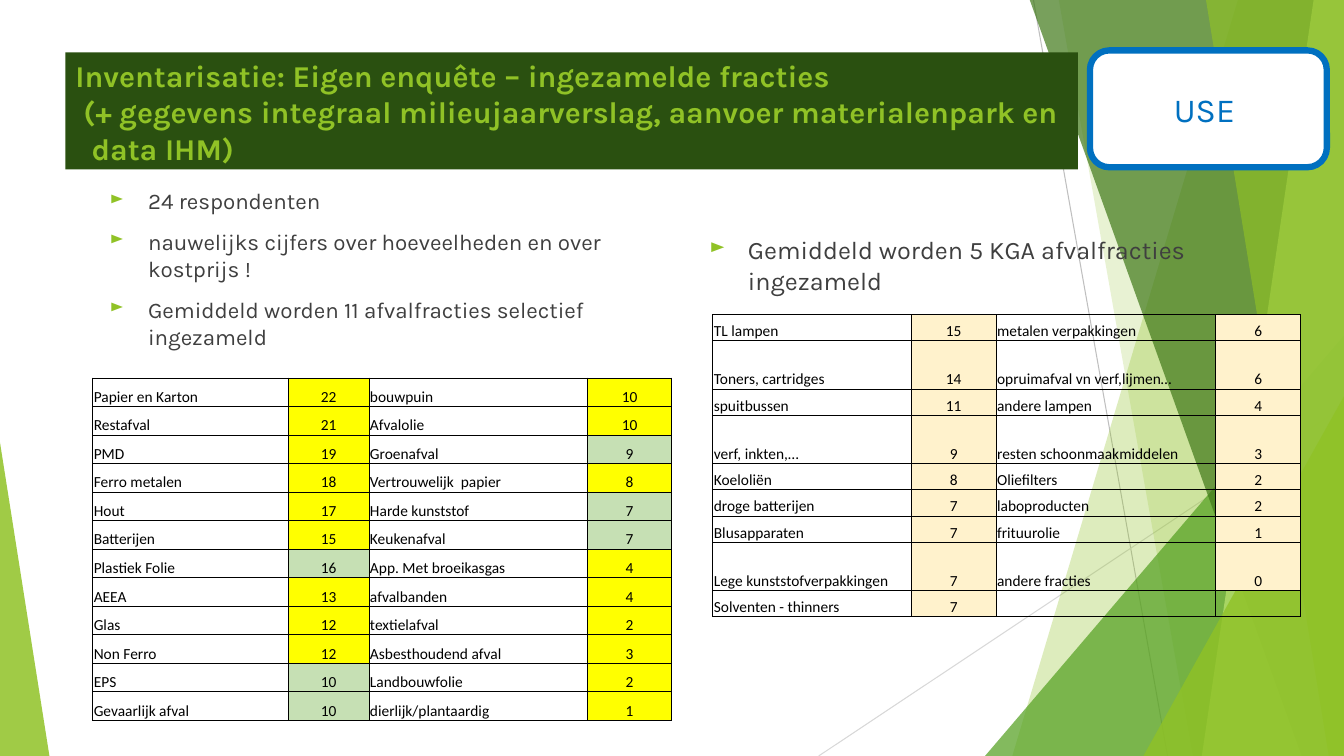
import pptx
import pptx.util
import pptx.dml.color
import pptx.enum.shapes
import pptx.enum.text
import pptx.oxml
import pptx.oxml.ns

Inches = pptx.util.Inches
Pt = pptx.util.Pt
RGBColor = pptx.dml.color.RGBColor
SHAPE = pptx.enum.shapes.MSO_SHAPE
ANCHOR = pptx.enum.text.MSO_ANCHOR
ALIGN = pptx.enum.text.PP_ALIGN
qn = pptx.oxml.ns.qn
NS = pptx.oxml.ns.nsdecls("a")

LIME = RGBColor(0x90, 0xC2, 0x26)
PALE_LIME = RGBColor(0xBF, 0xE4, 0x71)
GREEN = RGBColor(0x54, 0xA0, 0x21)
FOREST = RGBColor(0x3F, 0x78, 0x18)
DARK_GREEN = RGBColor(0x2A, 0x50, 0x10)
BLUE = RGBColor(0x00, 0x70, 0xC0)
TEXT_GRAY = RGBColor(0x3F, 0x3F, 0x3F)
LINE_GRAY = RGBColor(0xBF, 0xBF, 0xBF)
LINE_LIGHT = RGBColor(0xD8, 0xD8, 0xD8)
BLACK = RGBColor(0, 0, 0)
WHITE = RGBColor(0xFF, 0xFF, 0xFF)
YELLOW = RGBColor(0xFF, 0xFF, 0x00)
SAGE = RGBColor(0xC6, 0xE0, 0xB4)
CREAM = RGBColor(0xFF, 0xF2, 0xCC)


def write(tf, text, size=16, color=TEXT_GRAY, font="Karla", bold=False,
          align=None, left=0, indent=0, before=0, bullet=False):
    """Add a paragraph, using the first one while it is still empty."""
    p = tf.paragraphs[0] if not tf.text else tf.add_paragraph()
    p.alignment = align
    p.space_before = Pt(before)
    pPr = p._p.get_or_add_pPr()
    pPr.set("marL", str(Inches(left)))
    pPr.set("indent", str(Inches(indent)))
    if bullet:
        for xml in (f'<a:buClr {NS}><a:srgbClr val="{LIME}"/></a:buClr>',
                    f'<a:buSzPct {NS} val="80000"/>',
                    f'<a:buChar {NS} char="►"/>'):
            pPr.append(pptx.oxml.parse_xml(xml))
    if not text:
        p._p.get_or_add_endParaRPr().set("sz", str(size * 100))
        return
    r = p.add_run()
    r.text = text
    r.font.size, r.font.name, r.font.bold = Pt(size), font, bold
    r.font.color.rgb = color


def add_grid(left, top, widths, heights, rows, fills):
    """Add a bordered table; fills holds the two number colours per row."""
    s = slide.shapes.add_table(len(rows), len(widths), Inches(left), Inches(top),
                               Inches(sum(widths)), Inches(sum(heights)))
    table = s.table
    table.first_row = table.horz_banding = False
    for column, width in zip(table.columns, widths):
        column.width = Inches(width)
    for i, (row, height) in enumerate(zip(rows, heights)):
        table.rows[i].height = Inches(height)
        for j, text in enumerate(row):
            cell = table.cell(i, j)
            cell.vertical_anchor = ANCHOR.BOTTOM
            cell.margin_left = cell.margin_right = cell.margin_top = Inches(0.01)
            cell.margin_bottom = 0
            is_number = j % 2 == 1
            write(cell.text_frame, text, size=11, color=BLACK, font="Calibri",
                  align=ALIGN.CENTER if is_number else ALIGN.LEFT)
            if is_number and text:
                cell.fill.solid()
                cell.fill.fore_color.rgb = fills(i, j)
            else:
                cell.fill.background()
            tcPr = cell._tc.get_or_add_tcPr()
            for k, side in enumerate("LRTB"):
                tcPr.insert(k, pptx.oxml.parse_xml(
                    f'<a:ln{side} {NS} w="9525"><a:solidFill><a:srgbClr val="{BLACK}"/>'
                    f'</a:solidFill></a:ln{side}>'))


prs = pptx.Presentation()
prs.slide_width, prs.slide_height = Inches(13.33), Inches(7.5)
slide = prs.slides.add_slide(prs.slide_layouts[6])

# Thin background lines
for x1, y1, x2, y2, color in ((10.25, 0, 11.58, 7.5, LINE_GRAY),
                              (13.33, 4.03, 8.12, 7.5, LINE_LIGHT)):
    s = slide.shapes.add_connector(pptx.enum.shapes.MSO_CONNECTOR.STRAIGHT,
                                   Inches(x1), Inches(y1), Inches(x2), Inches(y2))
    s.line.color.rgb = color
    s.line.width = Pt(0.75)
    s._element.spPr.append(pptx.oxml.parse_xml(f"<a:effectLst {NS}/>"))

# Translucent green facets: panels (top x, bottom x) run to the right edge,
# triangles (left, top, width, apex) stand on the bottom edge
facets = [
    ((12.28, 10.04), LIME, 30),
    ((10.5, 11.83), LIME, 20),
    ((9.77, 3.33, 3.56, 1), GREEN, 72),
    ((10.21, 12.91), FOREST, 70),
    ((13.03, 11.92), PALE_LIME, 70),
    ((11.96, 13.18), LIME, 65),
    ((11.34, 3.93, 1.99, 1), LIME, 80),
    ((0, 4.39, 0.49, 0), LIME, 85),
]
for geometry, color, opacity in facets:
    if len(geometry) == 2:
        top_x, bottom_x = geometry
        builder = slide.shapes.build_freeform(Inches(top_x), Inches(-0.01))
        builder.add_line_segments([(Inches(x), Inches(y)) for x, y in (
            (13.33, -0.01), (13.33, 7.5), (bottom_x, 7.5))], close=True)
        s = builder.convert_to_shape()
    else:
        left, top, width, apex = geometry
        s = slide.shapes.add_shape(SHAPE.ISOSCELES_TRIANGLE, Inches(left), Inches(top),
                                   Inches(width), Inches(7.5 - top))
        s.adjustments[0] = apex
    s.shadow.inherit = False
    s.fill.solid()
    s.fill.fore_color.rgb = color
    s.line.fill.background()
    s._element.spPr.find(".//" + qn("a:srgbClr")).append(
        pptx.oxml.parse_xml(f'<a:alpha {NS} val="{opacity * 1000}"/>'))

# Title bar
s = slide.shapes.add_shape(SHAPE.RECTANGLE, Inches(0.65), Inches(0.52),
                           Inches(10.04), Inches(1.16))
s.shadow.inherit = False
s.fill.solid()
s.fill.fore_color.rgb = DARK_GREEN
s.line.fill.background()
tf = s.text_frame
tf.word_wrap = True
tf.vertical_anchor = ANCHOR.TOP
title = dict(size=21.6, color=LIME, bold=True, align=ALIGN.LEFT)
write(tf, "Inventarisatie: Eigen enquête – ingezamelde fracties", **title)
write(tf, "(+ gegevens integraal milieujaarverslag, aanvoer materialenpark en data IHM)",
      left=0.16, indent=-0.08, **title)

# Bullet lists
bullet_lists = [
    (0.99, 1.81, 5.75, 4.74, 16, ["24 respondenten",
                                  "nauwelijks cijfers over hoeveelheden en over kostprijs !",
                                  "Gemiddeld worden 11 afvalfracties selectief ingezameld"]),
    (6.94, 2.28, 5.54, 4.27, 18, ["Gemiddeld worden 5 KGA afvalfracties ingezameld"]),
]
for left, top, width, height, size, items in bullet_lists:
    tf = slide.shapes.add_textbox(Inches(left), Inches(top),
                                  Inches(width), Inches(height)).text_frame
    tf.word_wrap = True
    for i, item in enumerate(items):
        write(tf, item, size=size, left=0.38, indent=-0.38,
              before=10 if i else 0, bullet=True)

# Table of selectively collected fractions
waste_rows = [
    ("Papier en Karton", "22", "bouwpuin", "10"),
    ("Restafval", "21", "Afvalolie", "10"),
    ("PMD", "19", "Groenafval", "9"),
    ("Ferro metalen", "18", "Vertrouwelijk  papier", "8"),
    ("Hout", "17", "Harde kunststof", "7"),
    ("Batterijen", "15", "Keukenafval", "7"),
    ("Plastiek Folie", "16", "App. Met broeikasgas", "4"),
    ("AEEA", "13", "afvalbanden", "4"),
    ("Glas", "12", "textielafval", "2"),
    ("Non Ferro", "12", "Asbesthoudend afval", "3"),
    ("EPS", "10", "Landbouwfolie", "2"),
    ("Gevaarlijk afval", "10", "dierlijk/plantaardig", "1"),
]
sage_cells = {(2, 3), (4, 3), (5, 3), (6, 1), (10, 1), (11, 1)}
add_grid(0.92, 3.75, [1.94, 0.8, 2.17, 0.83], [3.4 / 12] * 12, waste_rows,
         lambda i, j: SAGE if (i, j) in sage_cells else YELLOW)

# Table of small hazardous waste
kga_rows = [
    ("TL lampen", "15", "metalen verpakkingen", "6"),
    ("Toners, cartridges", "14", "opruimafval vn verf,lijmen…", "6"),
    ("spuitbussen", "11", "andere lampen", "4"),
    ("verf, inkten,…", "9", "resten schoonmaakmiddelen", "3"),
    ("Koeloliën", "8", "Oliefilters", "2"),
    ("droge batterijen", "7", "laboproducten", "2"),
    ("Blusapparaten", "7", "frituurolie", "1"),
    ("Lege kunststofverpakkingen", "7", "andere fracties", "0"),
    ("Solventen - thinners", "7", "", ""),
]
kga_heights = [0.48 if i in (1, 3, 7) else 0.26 for i in range(len(kga_rows))]
add_grid(7.07, 3.12, [1.97, 0.84, 2.18, 0.84], kga_heights, kga_rows,
         lambda i, j: CREAM)

# USE badge
s = slide.shapes.add_shape(SHAPE.ROUNDED_RECTANGLE, Inches(10.81), Inches(0.5),
                           Inches(2.35), Inches(1.16))
s.shadow.inherit = False
s.fill.solid()
s.fill.fore_color.rgb = WHITE
s.line.color.rgb = BLUE
s.line.width = Pt(4.5)
s.text_frame.vertical_anchor = ANCHOR.MIDDLE
write(s.text_frame, "USE ", size=24, color=BLUE, align=ALIGN.CENTER)

prs.save("out.pptx")
